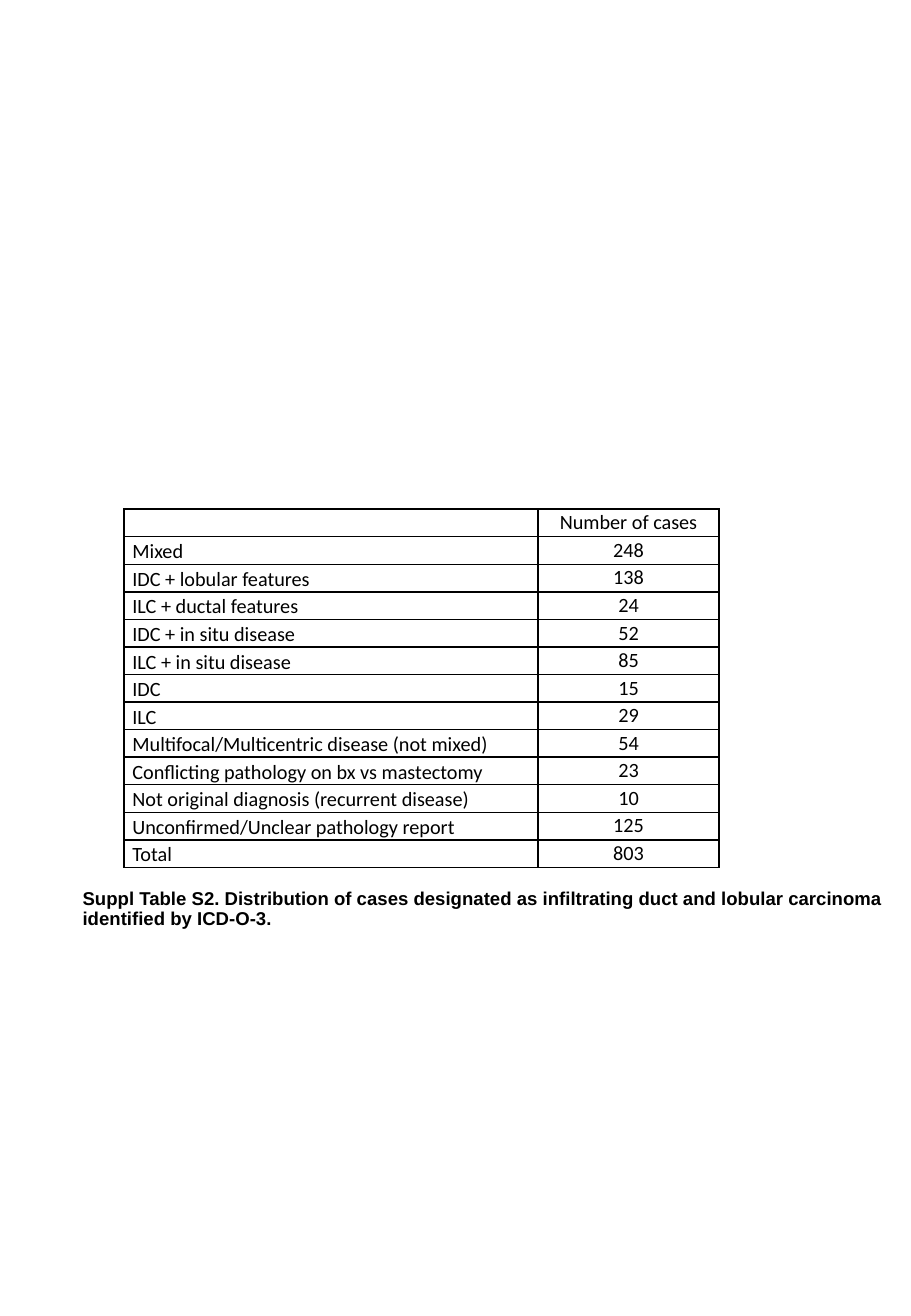
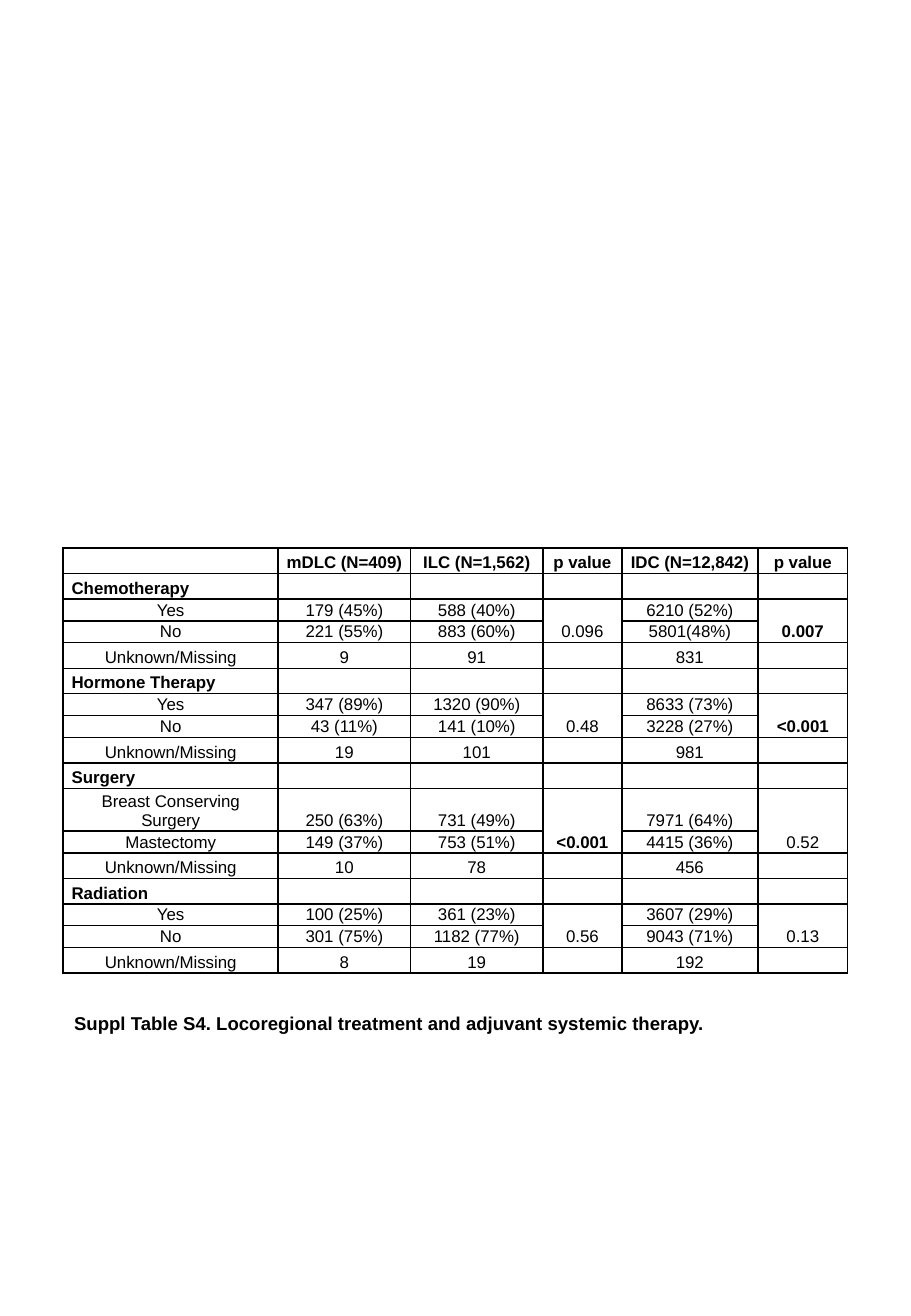
from dataclasses import dataclass

from lxml import etree
from pptx import Presentation
from pptx.dml.color import RGBColor
from pptx.enum.text import MSO_ANCHOR, MSO_AUTO_SIZE, PP_ALIGN
from pptx.oxml.ns import qn
from pptx.util import Inches, Pt

TOP, MIDDLE, BOTTOM = MSO_ANCHOR.TOP, MSO_ANCHOR.MIDDLE, MSO_ANCHOR.BOTTOM
LEFT, CENTER = PP_ALIGN.LEFT, PP_ALIGN.CENTER
NO_AUTOFIT = MSO_AUTO_SIZE.NONE

BLACK = "000000"
CAPTION_FONT = "Arial"
CAPTION_SIZE = 11
CAPTION_WIDTH, CAPTION_HEIGHT = 7.08, 0.63
BORDER_WIDTH = 1
SIDE_MARGIN = 0.07
TITLE_ONLY = 5


@dataclass
class Entry:
    text: str = ""
    bold: bool = False
    align: PP_ALIGN = CENTER
    anchor: MSO_ANCHOR = BOTTOM


@dataclass
class Grid:
    left: float
    top: float
    columns: list[float]
    rows: list[float]
    font: str
    size: int
    end_margin: float
    entries: list[list[Entry]]
    merges: list[tuple[int, int]]


@dataclass
class Page:
    caption: str
    left: float
    top: float
    grid: Grid


@dataclass
class Therapy:
    name: str
    options: list[list[str]]
    unknown: list[str]


CASES = [
    ("", "Number of cases"),
    ("Mixed", "248"),
    ("IDC + lobular features", "138"),
    ("ILC + ductal features", "24"),
    ("IDC + in situ disease", "52"),
    ("ILC + in situ disease", "85"),
    ("IDC", "15"),
    ("ILC", "29"),
    ("Multifocal/Multicentric disease (not mixed)", "54"),
    ("Conflicting pathology on bx vs mastectomy", "23"),
    ("Not original diagnosis (recurrent disease)", "10"),
    ("Unconfirmed/Unclear pathology report", "125"),
    ("Total", "803"),
]
CASES_HEIGHT = 2.95

TREATMENT_HEADER = ["", "mDLC (N=409)", "ILC (N=1,562)", "p value", "IDC (N=12,842)", "p value"]
P_VALUE_COLUMNS = (3, 5)
SIGNIFICANT = {"0.007", "<0.001"}
THERAPIES = [
    Therapy("Chemotherapy", [
        ["Yes", "179 (45%)", "588 (40%)", "0.096", "6210 (52%)", "0.007"],
        ["No", "221 (55%)", "883 (60%)", "", "5801(48%)", ""],
    ], ["9", "91", "", "831", ""]),
    Therapy("Hormone Therapy", [
        ["Yes", "347 (89%)", "1320 (90%)", "0.48", "8633 (73%)", "<0.001"],
        ["No", "43 (11%)", "141 (10%)", "", "3228 (27%)", ""],
    ], ["19", "101", "", "981", ""]),
    Therapy("Surgery", [
        ["Breast Conserving Surgery", "250 (63%)", "731 (49%)", "<0.001", "7971 (64%)", "0.52"],
        ["Mastectomy", "149 (37%)", "753 (51%)", "", "4415 (36%)", ""],
    ], ["10", "78", "", "456", ""]),
    Therapy("Radiation", [
        ["Yes", "100 (25%)", "361 (23%)", "0.56", "3607 (29%)", "0.13"],
        ["No", "301 (75%)", "1182 (77%)", "", "9043 (71%)", ""],
    ], ["8", "19", "", "192", ""]),
]
TALL_ROW, OPTION_ROW, WRAPPED_ROW = 0.21, 0.18, 0.35


def rgb(color: str) -> RGBColor:
    return RGBColor.from_string(color)


def format_runs(paragraph, font: str, size: int, bold: bool) -> None:
    for run in paragraph.runs:
        run.font.name = font
        run.font.size = Pt(size)
        run.font.bold = bold
        run.font.color.rgb = rgb(BLACK)


def cases_grid() -> Grid:
    entries = [[Entry(kind, align=LEFT), Entry(count, anchor=MIDDLE)] for kind, count in CASES]
    heights = [CASES_HEIGHT / len(CASES)] * len(CASES)
    return Grid(1.02, 4.19, [3.41, 1.49], heights, "Calibri", 12, 0, entries, [])


def treatment_grid() -> Grid:
    entries = [[Entry(label, bold=True) for label in TREATMENT_HEADER]]
    heights = [TALL_ROW]
    merges = []
    for therapy in THERAPIES:
        blanks = [Entry() for _ in TREATMENT_HEADER[1:]]
        entries.append([Entry(therapy.name, bold=True, align=LEFT), *blanks])
        heights.append(TALL_ROW)
        merges += [(len(entries), column) for column in P_VALUE_COLUMNS]
        for option in therapy.options:
            entries.append([Entry(value, bold=value in SIGNIFICANT) for value in option])
            wrapped = option[0] == "Breast Conserving Surgery"
            heights.append(WRAPPED_ROW if wrapped else OPTION_ROW)
        entries.append([Entry(value) for value in ["Unknown/Missing", *therapy.unknown]])
        heights.append(TALL_ROW)
    columns = [1.77, 1.09, 1.09, 0.65, 1.12, 0.74]
    return Grid(0.52, 4.51, columns, heights, "Arial", 10, 0.01, entries, merges)


def add_borders(cell) -> None:
    properties = cell._tc.get_or_add_tcPr()
    for side in ("lnL", "lnR", "lnT", "lnB"):
        line = etree.SubElement(properties, qn(f"a:{side}"), w=str(Pt(BORDER_WIDTH)))
        fill = etree.SubElement(line, qn("a:solidFill"))
        etree.SubElement(fill, qn("a:srgbClr"), val=BLACK)


def fill_cell(cell, entry: Entry, grid: Grid) -> None:
    cell.margin_left = cell.margin_right = Inches(SIDE_MARGIN)
    cell.margin_top = cell.margin_bottom = Inches(grid.end_margin)
    cell.vertical_anchor = entry.anchor
    add_borders(cell)
    cell.fill.background()
    paragraph = cell.text_frame.paragraphs[0]
    paragraph.alignment = entry.align
    if entry.text:
        paragraph.text = entry.text
        format_runs(paragraph, grid.font, grid.size, entry.bold)
    else:
        etree.SubElement(paragraph._p, qn("a:endParaRPr"), sz=str(grid.size * 100))


def draw_grid(slide, grid: Grid) -> None:
    table = slide.shapes.add_table(
        len(grid.rows), len(grid.columns), Inches(grid.left), Inches(grid.top),
        Inches(sum(grid.columns)), Inches(sum(grid.rows)),
    ).table
    table.first_row = table.horz_banding = False
    for column, width in zip(table.columns, grid.columns):
        column.width = Inches(width)
    for row, height, entries in zip(table.rows, grid.rows, grid.entries):
        row.height = Inches(height)
        for cell, entry in zip(row.cells, entries):
            fill_cell(cell, entry, grid)
    for row_index, column_index in grid.merges:
        table.cell(row_index, column_index).merge(table.cell(row_index + 1, column_index))


def draw_caption(slide, page: Page) -> None:
    caption = slide.shapes.title
    caption.left, caption.top = Inches(page.left), Inches(page.top)
    caption.width, caption.height = Inches(CAPTION_WIDTH), Inches(CAPTION_HEIGHT)
    frame = caption.text_frame
    frame.text = page.caption
    frame.word_wrap = True
    frame.auto_size = NO_AUTOFIT
    frame.vertical_anchor = TOP
    paragraph = frame.paragraphs[0]
    paragraph.alignment = LEFT
    paragraph.line_spacing = 0.9
    format_runs(paragraph, CAPTION_FONT, CAPTION_SIZE, True)


def main() -> None:
    presentation = Presentation()
    presentation.slide_width, presentation.slide_height = Inches(7.5), Inches(10.83)
    pages = [
        Page("Suppl Table S2. Distribution of cases designated as infiltrating duct and "
             "lobular carcinoma identified by ICD-O-3.", 0.58, 7.27, cases_grid()),
        Page("Suppl Table S4. Locoregional treatment and adjuvant systemic therapy.",
             0.51, 8.3, treatment_grid()),
    ]
    for page in pages:
        slide = presentation.slides.add_slide(presentation.slide_layouts[TITLE_ONLY])
        draw_caption(slide, page)
        draw_grid(slide, page.grid)
    presentation.save("out.pptx")


if __name__ == "__main__":
    main()
